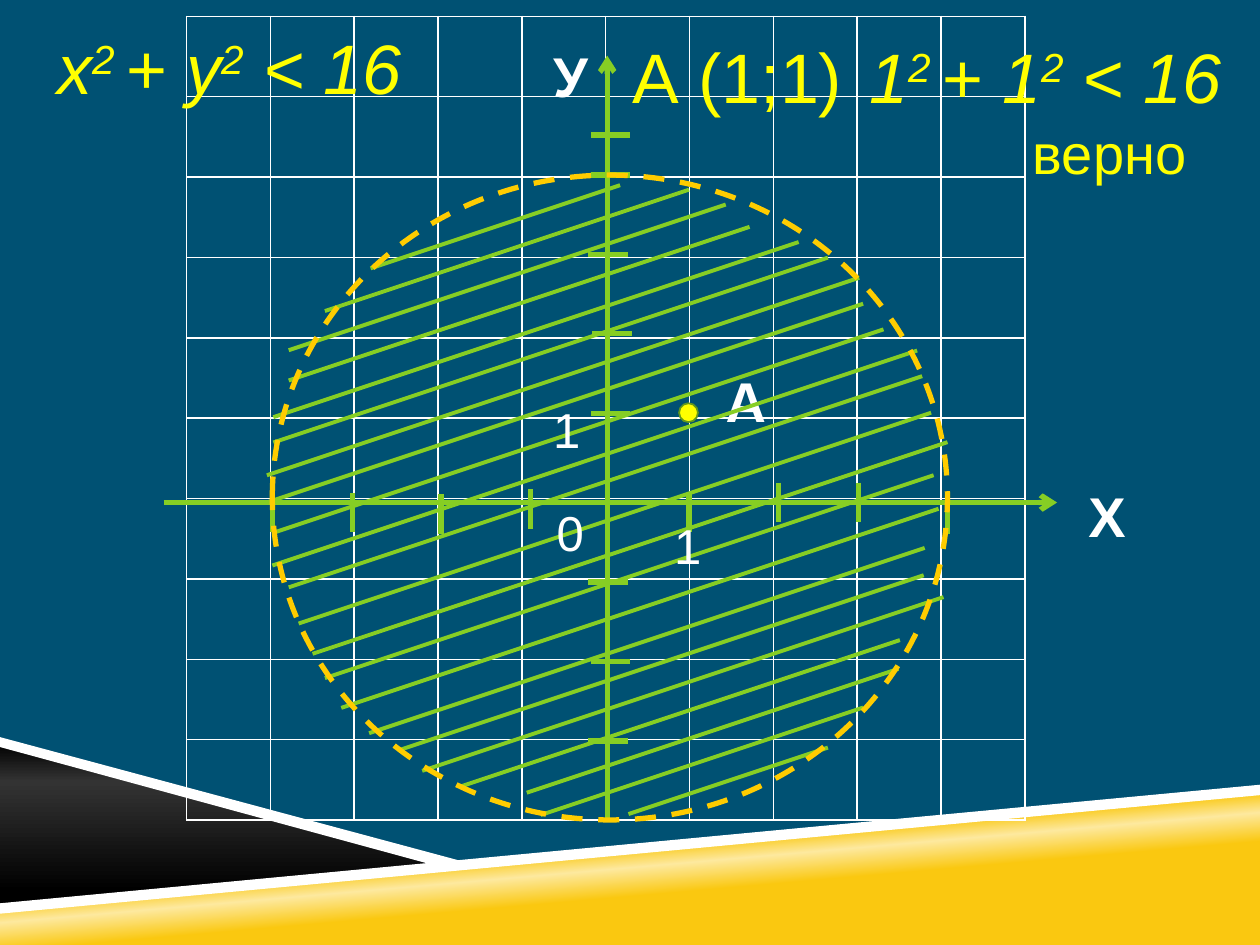
from lxml.etree import SubElement
from pptx import Presentation
from pptx.dml.color import RGBColor
from pptx.enum.dml import MSO_LINE
from pptx.enum.shapes import MSO_CONNECTOR, MSO_SHAPE
from pptx.enum.text import MSO_AUTO_SIZE, PP_ALIGN
from pptx.oxml import parse_xml
from pptx.oxml.ns import nsdecls, qn
from pptx.util import Cm, Pt

color = RGBColor.from_string
GREEN, YELLOW, WHITE = "86CE24", "FFFF00", "FFFFFF"

deck = Presentation()
deck.slide_width, deck.slide_height = Cm(25.4), Cm(19.05)
page = deck.slides.add_slide(deck.slide_layouts[6])
page.background.fill.solid()
page.background.fill.fore_color.rgb = color("005173")


def add_line(x1, y1, x2, y2, width=3, arrow=False):
    line = page.shapes.add_connector(
        MSO_CONNECTOR.STRAIGHT, Cm(x1), Cm(y1), Cm(x2), Cm(y2))
    line.line.color.rgb = color(GREEN)
    line.line.width = Pt(width)
    properties = line._element.spPr
    if arrow:
        SubElement(properties.find(qn("a:ln")), qn("a:tailEnd"), type="arrow")
    SubElement(properties, qn("a:effectLst"))


def add_label(spans, left, top, width, height, size, ink=WHITE,
              bold=False, formula=False):
    """Add a text box; every second span is a superscript."""
    box = page.shapes.add_textbox(Cm(left), Cm(top), Cm(width), Cm(height))
    frame = box.text_frame
    frame.word_wrap = formula
    frame.auto_size = MSO_AUTO_SIZE.SHAPE_TO_FIT_TEXT
    paragraph = frame.paragraphs[0]
    paragraph.alignment = PP_ALIGN.CENTER if formula else PP_ALIGN.LEFT
    for index, text in enumerate(spans):
        span = paragraph.add_run()
        span.text = text
        span.font.name = "Arial"
        span.font.size = Pt(size)
        span.font.bold = bold
        span.font.italic = formula
        span.font.color.rgb = color(ink)
        if index % 2:
            span.font._element.set("baseline", "30000")


# Decorative bands: corner points, gradient stops (percent, colour), angle
bands = [
    ([(0, 18.31), (25.4, 15.93), (25.4, 19.05), (0, 19.05)],
     [(39, "FAC810"), (50, "FDE99F"), (58, "FAC810")], 265),
    ([(0, 14.96), (9.12, 17.4), (0, 18.31)],
     [(0, "000000"), (24, "333333"), (90, "000000")], 90),
    ([(25.4, 15.82), (0, 18.21), (0, 18.42), (25.4, 16.03)], None, None),
    ([(0, 14.86), (0, 15.06), (8.89, 17.48), (9.53, 17.42)], None, None),
]
for corners, stops, angle in bands:
    points = [(Cm(x), Cm(y)) for x, y in corners]
    builder = page.shapes.build_freeform(*points[0], scale=1.0)
    builder.add_line_segments(points[1:], close=True)
    band = builder.convert_to_shape()
    band.shadow.inherit = False
    band.line.fill.background()
    if stops:
        band.fill.gradient()
        band.fill.gradient_angle = 360 - angle
        stop_list = band._element.spPr.find(qn("a:gradFill")).find(qn("a:gsLst"))
        for old_stop in list(stop_list):
            stop_list.remove(old_stop)
        for percent, shade in stops:
            stop = SubElement(stop_list, qn("a:gs"), pos=str(percent * 1000))
            SubElement(stop, qn("a:srgbClr"), val=shade)
    else:
        band.fill.solid()
        band.fill.fore_color.rgb = color(WHITE)

# Coordinate grid
grid = page.shapes.add_table(
    10, 10, Cm(3.76), Cm(0.33), Cm(16.94), Cm(16.2)).table
grid.first_row = False
grid.horz_banding = False
for column in grid.columns:
    column.width = Cm(1.69)
for row in grid.rows:
    row.height = Cm(1.62)
for cell in grid.iter_cells():
    cell.fill.background()
    cell_properties = cell._tc.get_or_add_tcPr()
    for index, side in enumerate(("lnL", "lnR", "lnT", "lnB")):
        cell_properties.insert(index, parse_xml(
            f'<a:{side} {nsdecls("a")} w="12700"><a:solidFill>'
            f'<a:srgbClr val="{WHITE}"/></a:solidFill></a:{side}>'))

# Axes and their ticks
add_line(3.3, 10.13, 21.31, 10.13, arrow=True)
add_line(12.24, 16.54, 12.24, 1.12, arrow=True)
tick = 0.8
for x, top in [(5.49, 9.93), (7.11, 9.93), (8.89, 9.96), (10.69, 9.86),
               (13.89, 9.93), (15.7, 9.73), (17.3, 9.73), (19.1, 9.96)]:
    add_line(x, top, x, top + tick)
for left, y in [(11.91, 2.72), (11.91, 3.53), (11.86, 5.13), (11.94, 6.73),
                (11.91, 8.33), (11.86, 11.73), (11.91, 13.34), (11.86, 14.94)]:
    add_line(left, y, left + tick, y)

add_label(["У"], 10.9, 0.71, 1.24, 1.63, 32, bold=True)
add_label(["Х"], 21.69, 9.58, 1.27, 1.63, 32, bold=True)
add_label(["A"], 14.38, 7.26, 1.35, 1.63, 32, bold=True)

# Hatching: start x, start y, end x; each line rises one unit in three
hatching = [
    (7.47, 5.41, 12.5), (6.55, 6.27, 13.89), (5.82, 7.06, 14.63),
    (5.82, 7.67, 15.11), (5.51, 8.41, 16.1), (5.51, 8.92, 16.69),
    (5.38, 9.58, 17.32), (5.38, 10.13, 17.4), (5.51, 10.74, 17.81),
    (5.49, 11.4, 18.49), (5.82, 11.84, 18.59), (6.02, 12.57, 18.77),
    (6.3, 13.18, 19.1), (6.55, 13.67, 18.82), (6.88, 14.27, 18.92),
    (7.44, 14.78, 18.64), (8.08, 15.11, 18.62), (8.51, 15.54, 19.02),
    (9.3, 15.85, 18.14), (10.62, 15.98, 18.11), (10.9, 16.43, 17.4),
    (12.67, 16.41, 16.69),
]
for start_x, start_y, end_x in hatching:
    add_line(start_x, start_y, end_x, start_y - (end_x - start_x) / 3, width=2.25)

circle = page.shapes.add_shape(
    MSO_SHAPE.OVAL, Cm(5.49), Cm(3.53), Cm(13.61), Cm(13))
circle.shadow.inherit = False
circle.fill.background()
circle.line.color.rgb = color("FFCC00")
circle.line.width = Pt(3)
circle.line.dash_style = MSO_LINE.DASH

point_a = page.shapes.add_shape(
    MSO_SHAPE.OVAL, Cm(13.69), Cm(8.13), Cm(0.38), Cm(0.38))
point_a.shadow.inherit = False
point_a.fill.solid()
point_a.fill.fore_color.rgb = color(YELLOW)
point_a.line.color.rgb = color("63981B")
point_a.line.width = Pt(1)

add_label(["х", "2 ", "+ y", "2", " < 16"], -0.08, 0.38, 9.4, 1.96, 40,
          YELLOW, formula=True)
add_label(["А (1;1)"], 12.5, 0.56, 4.8, 1.96, 40, YELLOW)
add_label(["1", "2 ", "+ 1", "2", " < 16"], 16.84, 0.56, 8.46, 1.96, 40,
          YELLOW, formula=True)
add_label(["верно"], 20.57, 2.26, 3.63, 1.63, 32, YELLOW)
for digit, left, top in [("1", 10.9, 7.92), ("1", 13.34, 10.26), ("0", 10.97, 10.01)]:
    add_label([digit], left, top, 1.07, 1.45, 28)

deck.save("out.pptx")
